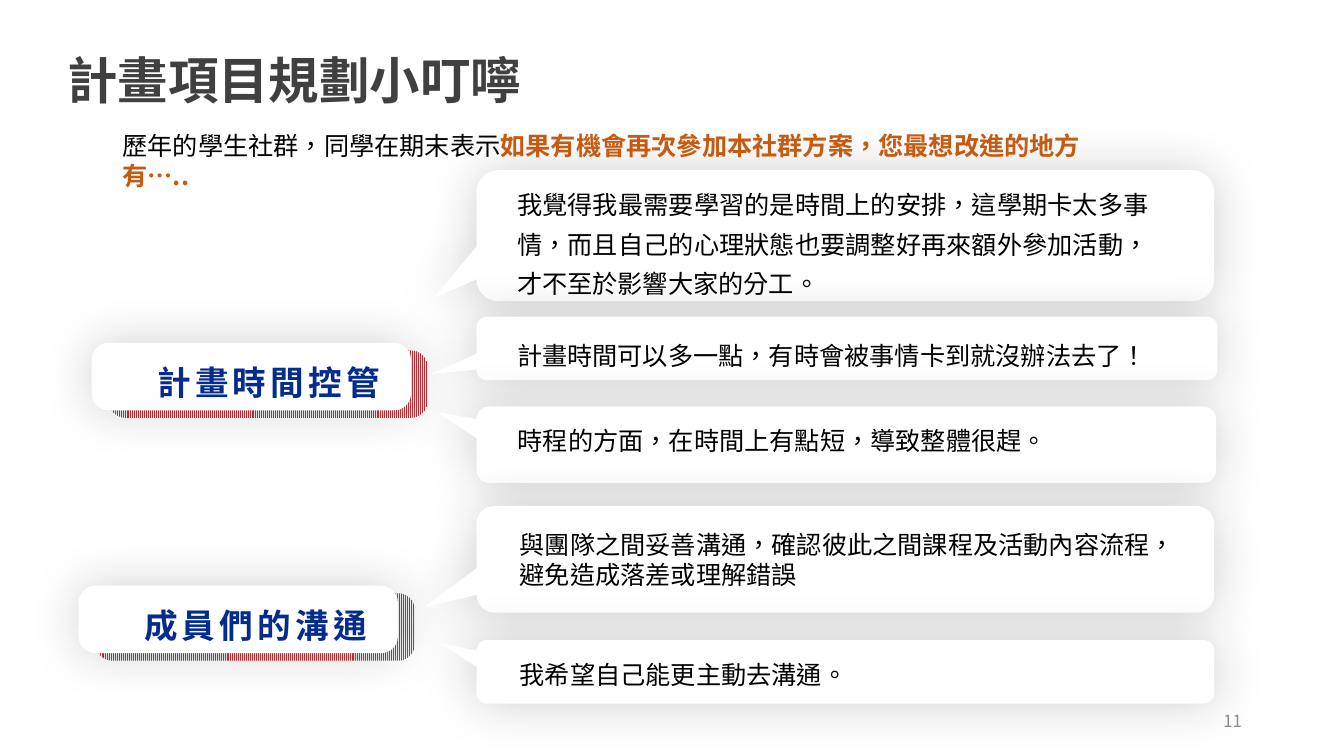
from lxml import etree
from pptx import Presentation
from pptx.dml.color import RGBColor
from pptx.enum import dml, shapes, text
from pptx.oxml import ns
from pptx.util import Cm, Pt

FONT = "Noto Sans CJK SC"
INK, NAVY, ORANGE, WHITE = "000000", "042B8E", "C55A11", "FFFFFF"
KIND, ALIGN = shapes.MSO_SHAPE, text.PP_ALIGN

# Content: lengths in cm
TITLE = "計畫項目規劃小叮嚀"
INTRO = [("歷年的學生社群，同學在期末表示", INK, False),
         ("如果有機會再次參加本社群方案，您最想改進的地方有…..", ORANGE, True)]
PAGE = "11"
# Topic, left, top
TOPICS = [("計畫時間控管", 2.31, 8.64), ("成員們的溝通", 1.98, 14.76)]
# Words, top, width, height, pointer, text box, line spacing, narrow inset
QUOTES = [
    ("我覺得我最需要學習的是時間上的安排，這學期卡太多事情，而且自己的心理狀態也要調整好"
     "再來額外參加活動，才不至於影響大家的分工。",
     4.29, 18.59, 3.3, (-0.559, 0.477), (12.83, 4.45, 16.33, 1.75), 1.3, True),
    ("計畫時間可以多一點，有時會被事情卡到就沒辦法去了！",
     7.98, 18.67, 1.6, (-0.561, 0.401), (12.83, 8.26, 16.38, 1.75), 1.3, True),
    ("時程的方面，在時間上有點短，導致整體很趕。",
     10.24, 18.64, 1.93, (-0.553, -0.423), (12.85, 10.62, 16.36, 1.27), None, True),
    ("與團隊之間妥善溝通，確認彼此之間課程及活動內容流程，避免造成落差或理解錯誤",
     12.75, 18.59, 2.69, (-0.571, 0.447), (12.85, 13.21, 16.94, 1.8), None, False),
    ("我希望自己能更主動去溝通。",
     16.13, 18.59, 1.6, (-0.551, -0.457), (12.9, 16.28, 16.81, 1.75), 1.3, True),
]
QUOTE_LEFT = 12.01
CARD = (8.05, 1.7)

deck = Presentation()
deck.slide_width, deck.slide_height = Cm(33.87), Cm(19.05)
slide = deck.slides.add_slide(deck.slide_layouts[6])


def color(code):
    return RGBColor.from_string(code)


def glow(shape):
    """Soft shadow on all sides."""
    props = shape._element.spPr
    effects = props.find(ns.qn("a:effectLst"))
    outer = etree.SubElement(effects, ns.qn("a:outerShdw"), blurRad=str(Pt(36)),
                             dist="0", dir="0", algn="ctr", rotWithShape="0")
    tint = etree.SubElement(outer, ns.qn("a:srgbClr"), val=INK)
    etree.SubElement(tint, ns.qn("a:alpha"), val="18000")


def block(kind, box, adjust):
    shape = slide.shapes.add_shape(kind, *map(Cm, box))
    shape.shadow.inherit = False
    shape.line.fill.background()
    shape.fill.solid()
    shape.fill.fore_color.rgb = color(WHITE)
    for i, value in enumerate(adjust):
        shape.adjustments[i] = value
    return shape


def write(box, parts, size, align=ALIGN.LEFT, leading=None, gap=0):
    """Text box; parts are (words, colour, bold)."""
    frame = slide.shapes.add_textbox(*map(Cm, box)).text_frame
    frame.word_wrap = True
    para = frame.paragraphs[0]
    para.alignment = align
    if leading:
        para.line_spacing = leading
    for words, ink, bold in parts:
        run = para.add_run()
        run.text = words
        font = run.font
        font.name, font.size, font.bold = FONT, Pt(size), bold
        font.color.rgb = color(ink)
        props = run._r.get_or_add_rPr()
        props.set("lang", "zh-TW")
        if gap:
            props.set("spc", str(gap * 100))
        east = etree.Element(ns.qn("a:ea"), typeface=FONT)
        props.find(ns.qn("a:latin")).addnext(east)
    return frame


# Title
write((1.45, 1.12, 12.93, 1.8), [(TITLE, "404040", True)], 36)

# Topic cards with a striped back
for words, left, top in TOPICS:
    back = block(KIND.ROUNDED_RECTANGLE, (left + 0.43, top + 0.19, *CARD), [0.251])
    back.fill.patterned()
    back.fill.pattern = dml.MSO_PATTERN.LIGHT_VERTICAL
    back.fill.fore_color.rgb = color("C13238")
    back.fill.back_color.rgb = color("F5F5F5")
    glow(block(KIND.ROUNDED_RECTANGLE, (left, top, *CARD), [0.251]))
    write((left + 0.22, top + 0.15, 8.48, 1.5), [(words, NAVY, True)], 24,
          ALIGN.CENTER, 1.2, 3)

# Quotes
for words, top, wide, high, tip, box, leading, narrow in QUOTES:
    glow(block(KIND.ROUNDED_RECTANGULAR_CALLOUT, (QUOTE_LEFT, top, wide, high),
               (*tip, 0.167)))
    frame = write(box, [(words, INK, False)], 18,
                  ALIGN.JUSTIFY if leading else ALIGN.LEFT, leading)
    if narrow:
        frame.margin_left = frame.margin_right = Cm(0.2)
        frame.margin_top = frame.margin_bottom = Cm(0.1)

# Introduction and page number
write((2.84, 3.15, 26.31, 1.02), INTRO, 18)
foot = write((23.93, 17.65, 7.62, 1.02), [(PAGE, "8C8C8C", False)], 12, ALIGN.RIGHT)
foot.vertical_anchor = text.MSO_ANCHOR.MIDDLE

deck.save("out.pptx")
